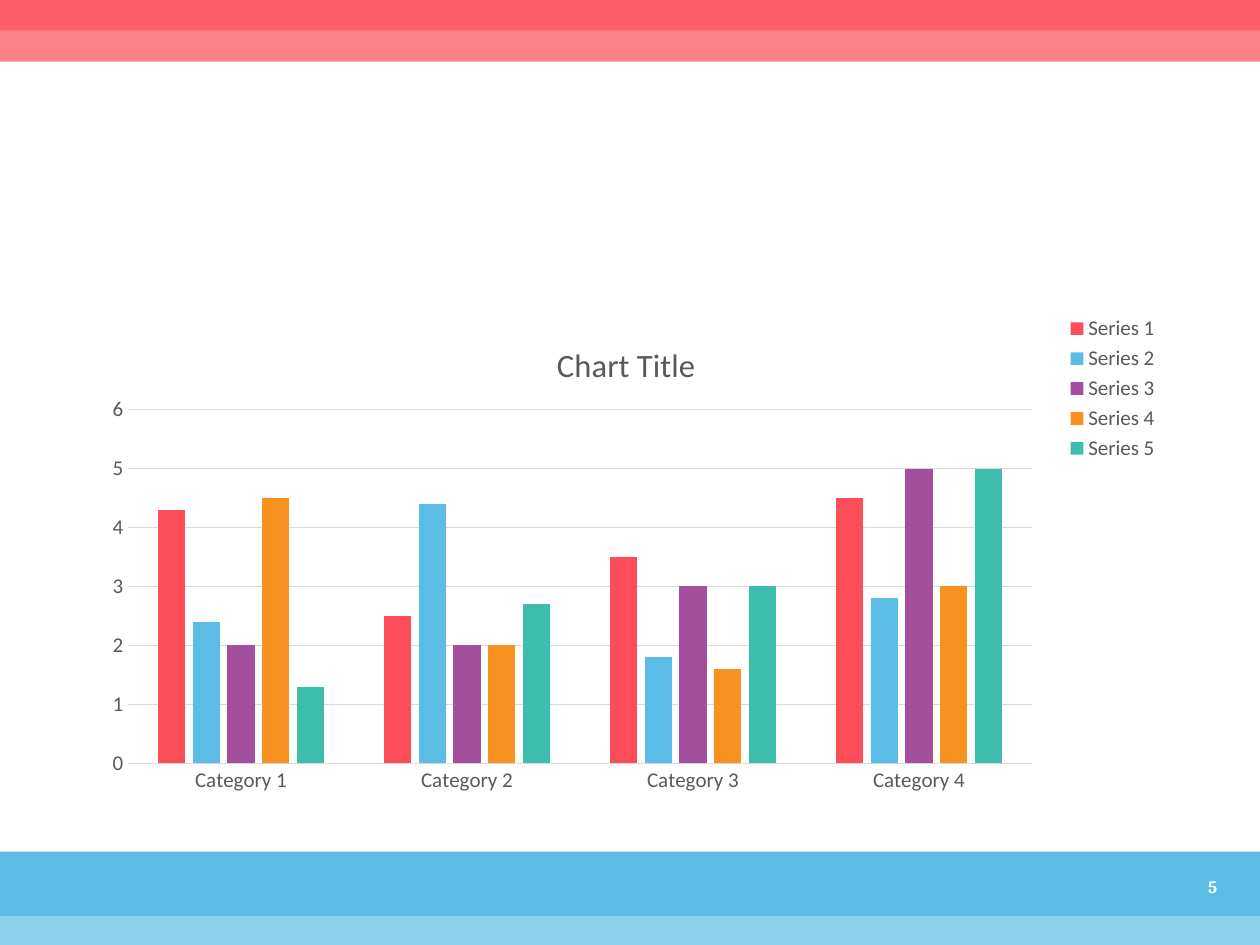
from dataclasses import dataclass

from lxml import etree
from pptx import Presentation
from pptx.chart.data import CategoryChartData
from pptx.dml.color import RGBColor
from pptx.enum.chart import XL_CHART_TYPE, XL_LEGEND_POSITION, XL_TICK_MARK
from pptx.enum.shapes import MSO_SHAPE
from pptx.enum.text import MSO_AUTO_SIZE, PP_ALIGN
from pptx.oxml.ns import qn
from pptx.util import Pt


@dataclass(frozen=True)
class Theme:
    red: str = "FC4D58"
    blue: str = "5BBDE5"
    purple: str = "A34F9D"
    orange: str = "F79120"
    teal: str = "3DBDAB"
    grey: str = "595959"
    rule: str = "D9D9D9"
    white: str = "FFFFFF"
    body_font: str = "Calibri"
    number_font: str = "Cambria"
    title_size: float = 18.6
    label_size: float = 12
    number_size: float = 10


THEME = Theme()
CATEGORIES = [f"Category {n}" for n in range(1, 5)]
SERIES = [
    ("Series 1", (4.3, 2.5, 3.5, 4.5), THEME.red),
    ("Series 2", (2.4, 4.4, 1.8, 2.8), THEME.blue),
    ("Series 3", (2, 2, 3, 5), THEME.purple),
    ("Series 4", (4.5, 2, 1.6, 3), THEME.orange),
    ("Series 5", (1.3, 2.7, 3, 5), THEME.teal),
]


def rgb(color):
    return RGBColor.from_string(color)


def style_font(font, color=THEME.grey, **values):
    defaults = {"name": THEME.body_font, "size": Pt(THEME.label_size), "bold": False}
    for key, value in (defaults | values).items():
        setattr(font, key, value)
    font.color.rgb = rgb(color)


def style_line(line):
    line.color.rgb = rgb(THEME.rule)
    line.width = Pt(0.75)


def set_layout(parent, **values):
    """Place a chart part by fractions of the chart area."""
    layout = parent.find(qn("c:layout"))
    if layout is None:
        layout = etree.Element(qn("c:layout"))
        parent.insert(0, layout)
    for child in list(layout):
        layout.remove(child)
    manual = etree.SubElement(layout, qn("c:manualLayout"))
    for key, value in values.items():
        etree.SubElement(manual, qn(f"c:{key}")).set("val", str(value))


def add_bands(s, box, color, bands):
    """Stack full-width bands, each given as (height, opacity in percent)."""
    left, top, width = box
    for height, opacity in bands:
        sp = s.shapes.add_shape(
            MSO_SHAPE.RECTANGLE, Pt(left), Pt(top), Pt(width), Pt(height))
        sp.shadow.inherit = False
        sp.fill.solid()
        sp.fill.fore_color.rgb = rgb(color)
        sp.line.fill.background()
        if opacity < 100:
            clr = sp.fill._xPr.find(f"{qn('a:solidFill')}/{qn('a:srgbClr')}")
            etree.SubElement(clr, qn("a:alpha")).set("val", str(opacity * 1000))
        top += height


def add_page_number(s, box, number):
    tf = s.shapes.add_textbox(*map(Pt, box)).text_frame
    frame = {"margin_left": 0, "margin_right": 0, "margin_top": Pt(3.6),
             "margin_bottom": Pt(3.6), "word_wrap": True,
             "auto_size": MSO_AUTO_SIZE.SHAPE_TO_FIT_TEXT}
    for key, value in frame.items():
        setattr(tf, key, value)
    p = tf.paragraphs[0]
    p.alignment = PP_ALIGN.CENTER
    r = p.add_run()
    r.text = number
    style_font(r.font, THEME.white, name=THEME.number_font,
               size=Pt(THEME.number_size), bold=True)


def add_column_chart(s, box):
    data = CategoryChartData()
    data.categories = CATEGORIES
    for name, values, _ in SERIES:
        data.add_series(name, values)
    chart = s.shapes.add_chart(
        XL_CHART_TYPE.COLUMN_CLUSTERED, *map(Pt, box), data).chart
    style_font(chart.font)

    # Title
    chart.has_title = True
    title = chart.chart_title
    title.text_frame.text = "Chart Title"
    style_font(title.text_frame.paragraphs[0].runs[0].font, size=Pt(THEME.title_size))
    title.include_in_layout = False
    set_layout(title._element, xMode="edge", yMode="edge", x=0.43, y=0.05)

    # Columns
    plot = chart.plots[0]
    plot.gap_width, plot.overlap, plot.vary_by_categories = 219, -27, False
    for series, (_, _, color) in zip(plot.series, SERIES):
        series.format.fill.solid()
        series.format.fill.fore_color.rgb = rgb(color)
    set_layout(chart._chartSpace.chart.plotArea, layoutTarget="inner",
               xMode="edge", yMode="edge", x=0.035, y=0.2, w=0.844, h=0.718)

    # Axes
    for axis in (chart.category_axis, chart.value_axis):
        axis.major_tick_mark = axis.minor_tick_mark = XL_TICK_MARK.NONE
        style_font(axis.tick_labels.font)
    style_line(chart.category_axis.format.line)
    scale = {"minimum_scale": 0, "maximum_scale": 6, "major_unit": 1}
    for key, value in scale.items():
        setattr(chart.value_axis, key, value)
    chart.value_axis.format.line.fill.background()
    style_line(chart.value_axis.major_gridlines.format.line)

    # Legend
    chart.has_legend = True
    chart.legend.position = XL_LEGEND_POSITION.CORNER
    chart.legend.include_in_layout = False
    style_font(chart.legend.font)


def main():
    prs = Presentation()
    prs.slide_width, prs.slide_height = Pt(720), Pt(540)
    s = prs.slides.add_slide(prs.slide_layouts[6])
    add_bands(s, (0, 486.75, 720), THEME.blue, [(36.75, 100), (18, 70)])
    add_page_number(s, (677.5, 496.8, 31, 19.4), "5")
    add_bands(s, (0, -0.75, 720), THEME.red, [(18, 90), (18, 70)])
    add_column_chart(s, (51.8, 177.8, 612, 281.5))
    prs.save("out.pptx")


if __name__ == "__main__":
    main()
